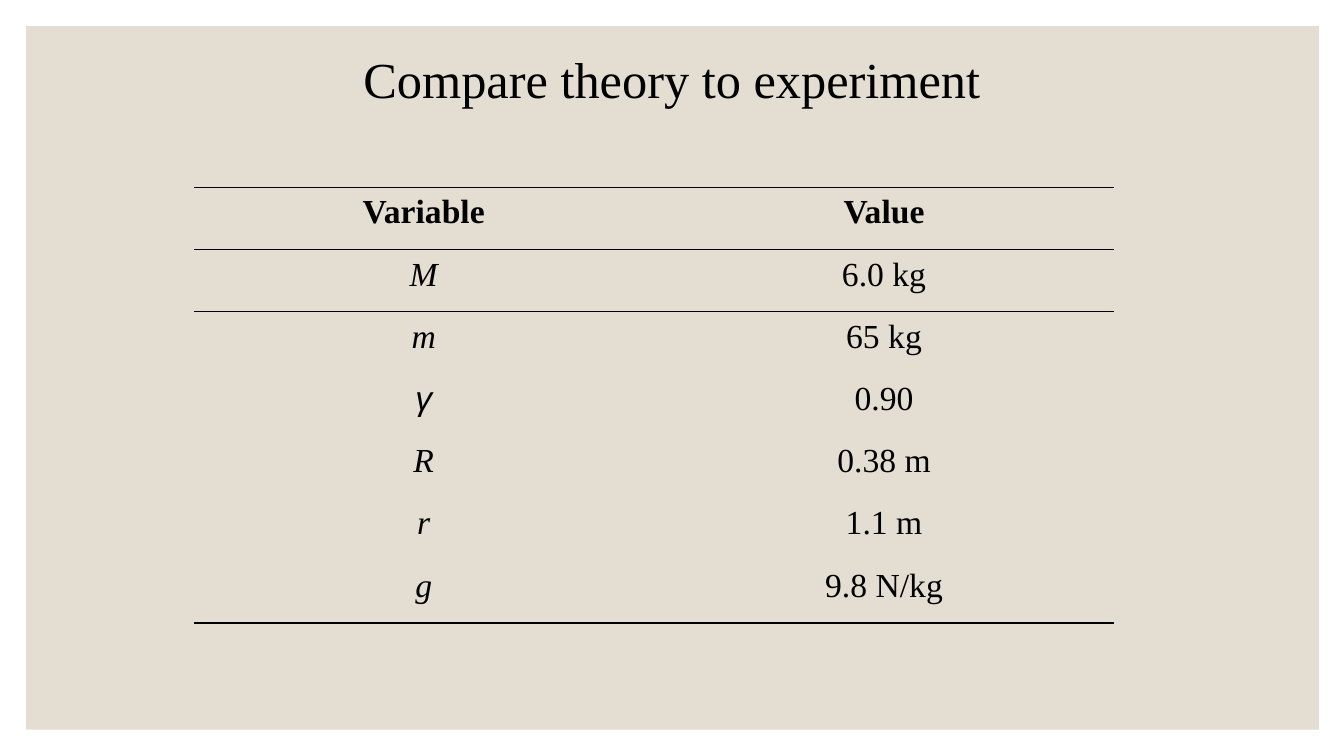
from lxml.etree import SubElement
from pptx import Presentation
from pptx.dml.color import RGBColor
from pptx.enum.shapes import MSO_SHAPE
from pptx.enum.text import MSO_ANCHOR, PP_ALIGN
from pptx.oxml.ns import qn
from pptx.util import Pt

EMU_PER_PX = 9144  # 100 px to the inch
BLACK = RGBColor(0x00, 0x00, 0x00)
SAND = RGBColor(0xE3, 0xDE, 0xD1)
SERIF = "Times New Roman"
SANS = "Arial"
NO_TABLE_STYLE = "{2D5ABB26-0587-4C30-8999-92F81FD0307C}"

HEADER = ("Variable", "Value")
VARIABLES = [
    ("M", "6.0 kg"),
    ("m", "65 kg"),
    ("γ", "0.90"),
    ("R", "0.38 m"),
    ("r", "1.1 m"),
    ("g", "9.8 N/kg"),
]


def px(*lengths):
    return [length * EMU_PER_PX for length in lengths]


def write_text(text_frame, text, size, font_name=SERIF, **font_format):
    paragraph = text_frame.paragraphs[0]
    paragraph.alignment = PP_ALIGN.CENTER
    run = paragraph.add_run()
    run.text = text
    run.font.color.rgb = BLACK
    values = {"name": font_name, "size": Pt(size), **font_format}
    for name, value in values.items():
        setattr(run.font, name, value)
    return paragraph


def add_panel(slide, left, top, width, height):
    panel = slide.shapes.add_shape(MSO_SHAPE.RECTANGLE, *px(left, top, width, height))
    panel.shadow.inherit = False
    panel.fill.solid()
    panel.fill.fore_color.rgb = SAND
    panel.line.fill.background()
    # Send the panel behind the title
    slide.shapes.element.insert(2, panel.element)


def set_title(slide, text, left, top, width, height):
    title = slide.shapes.title
    title.left, title.top, title.width, title.height = px(left, top, width, height)
    title.text_frame.word_wrap = False
    title.text_frame.vertical_anchor = MSO_ANCHOR.MIDDLE
    write_text(title.text_frame, text, 36)


def set_borders(cell, borders):
    """Draw the given sides, as tag: points, in schema order before the fill."""
    properties = cell._tc.get_or_add_tcPr()
    for index, (tag, points) in enumerate(borders.items()):
        line = SubElement(properties, qn(f"a:{tag}"), w=str(Pt(points)))
        fill = SubElement(line, qn("a:solidFill"))
        SubElement(fill, qn("a:srgbClr"), val=str(BLACK))
        properties.insert(index, line)


def row_borders(row, last_row):
    if row == 0:
        return {"lnT": 1.5, "lnB": 1}
    if row == 1:
        return {"lnT": 1}
    return {"lnB": 1.5} if row == last_row else {}


def add_variable_table(slide, left, top, width, height):
    rows = [HEADER, *VARIABLES]
    last_row = len(rows) - 1
    frame = slide.shapes.add_table(len(rows), len(HEADER), *px(left, top, width, height))
    table = frame.table
    table.first_row = table.horz_banding = False
    table._tbl.tblPr.find(qn("a:tableStyleId")).text = NO_TABLE_STYLE
    margin = px(7)[0]
    cell_format = {
        "margin_left": margin, "margin_right": margin,
        "margin_top": 0, "margin_bottom": 0,
        "vertical_anchor": MSO_ANCHOR.MIDDLE,
    }
    for row, texts in enumerate(rows):
        for column, text in enumerate(texts):
            cell = table.cell(row, column)
            for name, value in cell_format.items():
                setattr(cell, name, value)
            cell.fill.background()
            set_borders(cell, row_borders(row, last_row))
            paragraph = write_text(
                cell.text_frame, text, 24, SANS if text == "γ" else SERIF,
                bold=row == 0, italic=row > 0 and column == 0)
            paragraph.line_spacing = Pt(18)
            if row == 1:
                paragraph.space_before = Pt(6)
            if row == last_row and column == 1:
                paragraph.space_after = Pt(6)


def main():
    presentation = Presentation()
    presentation.slide_width, presentation.slide_height = px(1333, 750)
    slide = presentation.slides.add_slide(presentation.slide_layouts[5])

    # Background and title
    add_panel(slide, 26, 26, 1282, 698)
    set_title(slide, "Compare theory to experiment", 347, 42, 639, 71)

    # Measured values
    add_variable_table(slide, 192, 186, 913, 432)

    presentation.save("out.pptx")


if __name__ == "__main__":
    main()
